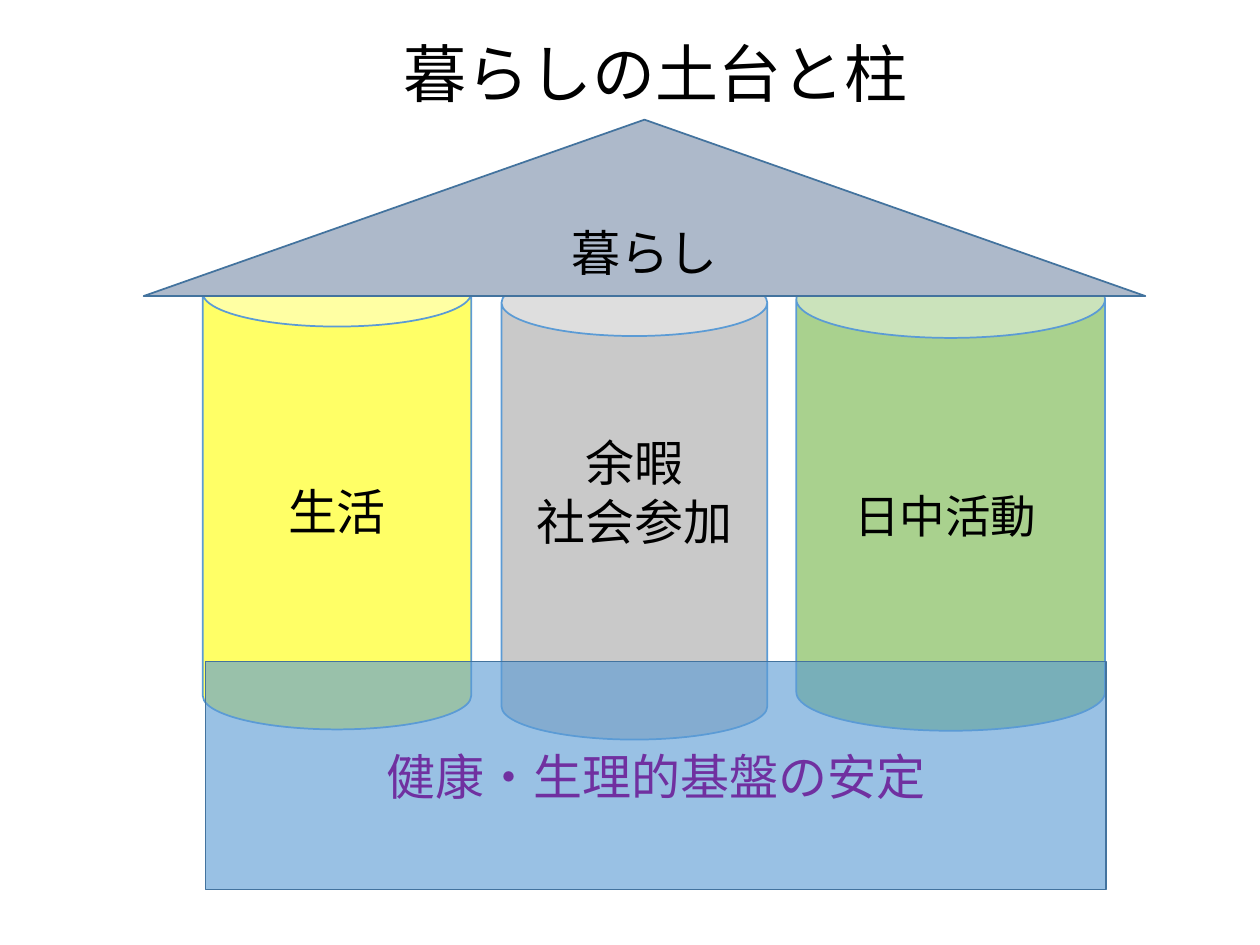
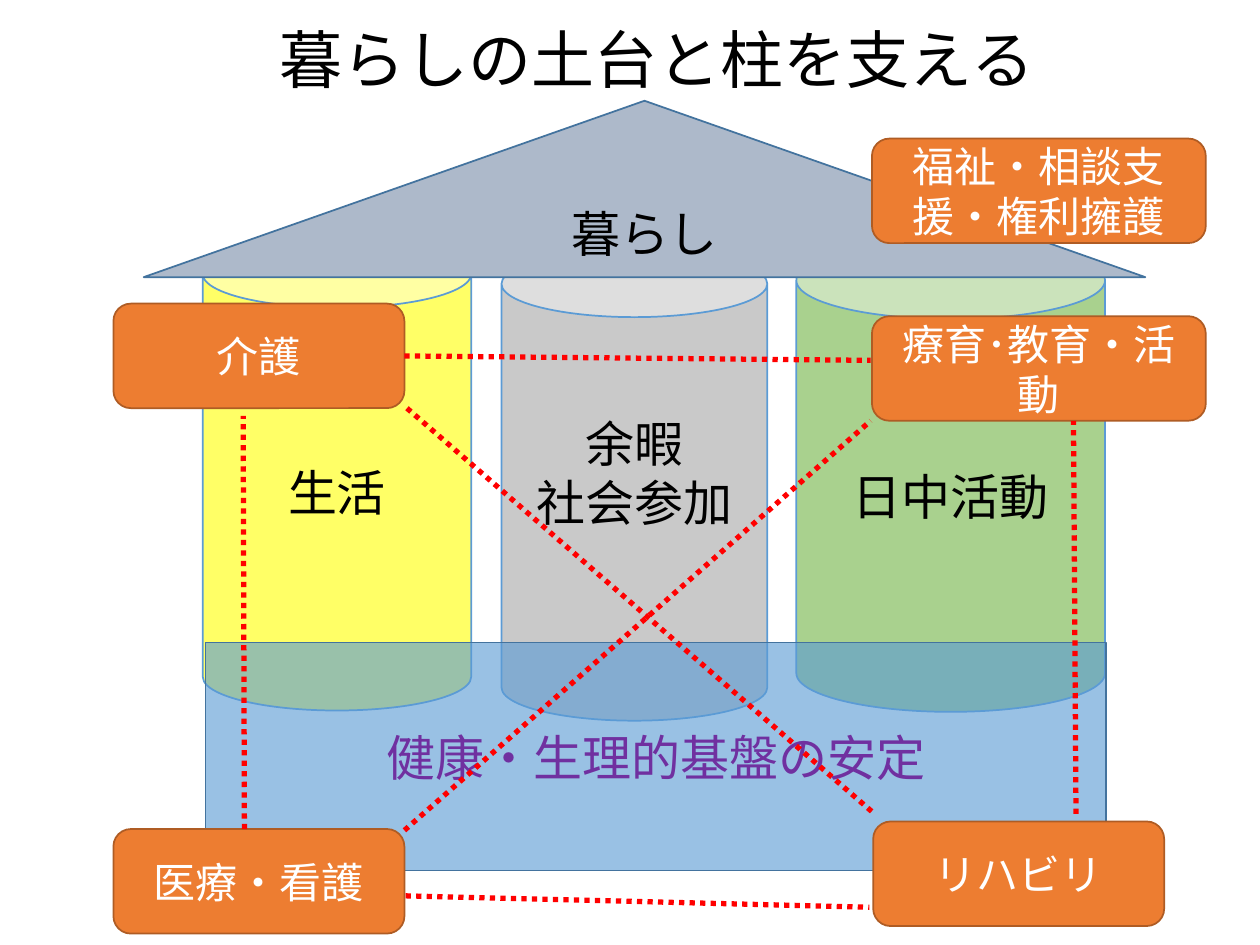
from lxml import etree
from pptx import Presentation, util as u
from pptx.dml.color import RGBColor
from pptx.enum import dml, shapes, text
from pptx.oxml.ns import qn

# Shared look
COLOURS = {
    "black": "000000", "white": "FFFFFF",
    "living": "FFFF66", "leisure": "C9C9C9", "daytime": "A9D18E",
    "pillar_edge": "5B9BD5", "roof": "ADB9CA", "house_edge": "43739E",
    "foundation": "5B9BD5", "foundation_text": "7030A0",
    "support": "ED7D31", "support_edge": "AF5C24", "link": "FF0000",
}
HOUSE_FONT, SUPPORT_FONT = "Noto Sans CJK JP", "Calibri"
WIDTH, HEIGHT = u.Inches(10), u.Inches(7.5)
COLUMN, ROW = WIDTH / 100, HEIGHT / 75
PILLAR_HEIGHT = 37.3
SUPPORT_HEIGHT = 8.3


def colour(name):
    return RGBColor.from_string(COLOURS[name])


def grid(left, top, width, height):
    """Turn columns and rows into slide lengths."""
    return [round(n * unit) for n, unit in
            zip((left, top, width, height), (COLUMN, ROW, COLUMN, ROW))]


def write(frame, words, size=28, font=HOUSE_FONT, ink="black",
          align=text.PP_ALIGN.CENTER, anchor=text.MSO_ANCHOR.MIDDLE,
          indent=0, lift=0):
    """Fill a frame; indent and lift widen the left and bottom margins."""
    frame.word_wrap = True
    frame.auto_size = text.MSO_AUTO_SIZE.NONE
    frame.vertical_anchor = anchor
    frame.margin_left = u.Inches(0.1 + indent)
    frame.margin_right = u.Inches(0.1)
    frame.margin_top = u.Inches(0.05)
    frame.margin_bottom = u.Inches(0.05 + lift)
    for number, line in enumerate(words.split("\n")):
        paragraph = frame.add_paragraph() if number else frame.paragraphs[0]
        paragraph.alignment = align
        run = paragraph.add_run()
        run.text = line
        run.font.size = u.Pt(size)
        run.font.name = font
        run.font.color.rgb = colour(ink)
        east_asian = etree.SubElement(run.font._element, qn("a:ea"))
        east_asian.set("typeface", font)


def add_block(slide, preset, place, fill, edge, words, opacity=None, **style):
    block = slide.shapes.add_shape(preset, *grid(*place))
    block.shadow.inherit = False
    block.fill.solid()
    block.fill.fore_color.rgb = colour(fill)
    if opacity:
        tint = block.fill._xPr.find(f"{qn('a:solidFill')}/{qn('a:srgbClr')}")
        etree.SubElement(tint, qn("a:alpha")).set("val", str(opacity * 1000))
    block.line.color.rgb = colour(edge)
    block.line.width = u.Pt(1)
    write(block.text_frame, words, **style)
    return block


def add_title(slide, words, left, top):
    title = slide.shapes.title
    title.left, title.top, title.width, title.height = grid(left, top, 74.1, 7.1)
    write(title.text_frame, words, size=36, font=SUPPORT_FONT)


def add_house(slide, apex, daytime_style):
    """Pillars, roof and foundation, hung from the row of the roof's apex."""
    pillars = [
        (16.1, 11.1, 21.3, "living", "生活", {}),
        (39.8, 11.9, 21.1, "leisure", "余暇\n社会参加", {"lift": 0.47}),
        (63.2, 11.2, 24.5, "daytime", "日中活動", daytime_style),
    ]
    for left, drop, width, fill, words, style in pillars:
        add_block(slide, shapes.MSO_SHAPE.CAN,
                  (left, apex + drop, width, PILLAR_HEIGHT),
                  fill, "pillar_edge", words, **style)
    add_block(slide, shapes.MSO_SHAPE.ISOSCELES_TRIANGLE,
              (11.4, apex, 79.5, 14), "roof", "house_edge", "暮らし")
    add_block(slide, shapes.MSO_SHAPE.RECTANGLE,
              (16.3, apex + 43, 71.5, 18.1), "foundation", "house_edge",
              "健康・生理的基盤の安定", opacity=62, ink="foundation_text")


def add_support(slide, left, top, width, words):
    return add_block(slide, shapes.MSO_SHAPE.ROUNDED_RECTANGLE,
                     (left, top, width, SUPPORT_HEIGHT),
                     "support", "support_edge", words,
                     size=24, font=SUPPORT_FONT, ink="white")


def add_link(slide, *ends):
    link = slide.shapes.add_connector(shapes.MSO_CONNECTOR.STRAIGHT, *grid(*ends))
    link.line.color.rgb = colour("link")
    link.line.width = u.Pt(3)
    link.line.dash_style = dml.MSO_LINE.ROUND_DOT
    etree.SubElement(link._element.spPr, qn("a:effectLst"))
    return link


def main():
    deck = Presentation()
    deck.slide_width, deck.slide_height = WIDTH, HEIGHT
    title_only = deck.slide_layouts[5]

    # Foundation and pillars of daily life
    house = deck.slides.add_slide(title_only)
    add_house(house, 9.5, {"size": 26, "align": text.PP_ALIGN.LEFT, "indent": 0.36})
    add_title(house, "暮らしの土台と柱", 15, 2.2)

    # The supports around the house
    supported = deck.slides.add_slide(title_only)
    add_house(supported, 8, {})
    care = add_support(supported, 9, 24.1, 23.1, "介護")
    for support in [
        (9, 65.8, 23.1, "医療・看護"),
        (69.2, 25.1, 26.5, "療育･教育・活動"),
        (69.2, 11, 26.5, "福祉・相談支援・権利擁護"),
        (69.3, 65.2, 23.1, "リハビリ"),
    ]:
        add_support(supported, *support)

    # Dotted links between the supports
    care_to_education = add_link(supported, 32.2, 28.3, 69.1, 28.6)
    care_to_education.begin_connect(care, 3)
    for ends in [
        (19.4, 65.8, 19.3, 33),
        (32.2, 71.1, 69, 72),
        (85.4, 64.6, 85.2, 33.4),
        (32.3, 32.4, 69.3, 64.5),
        (32.1, 65.9, 69.1, 33.4),
    ]:
        add_link(supported, *ends)
    add_title(supported, "暮らしの土台と柱を支える", 15.1, 1.1)

    deck.save("out.pptx")


if __name__ == "__main__":
    main()
